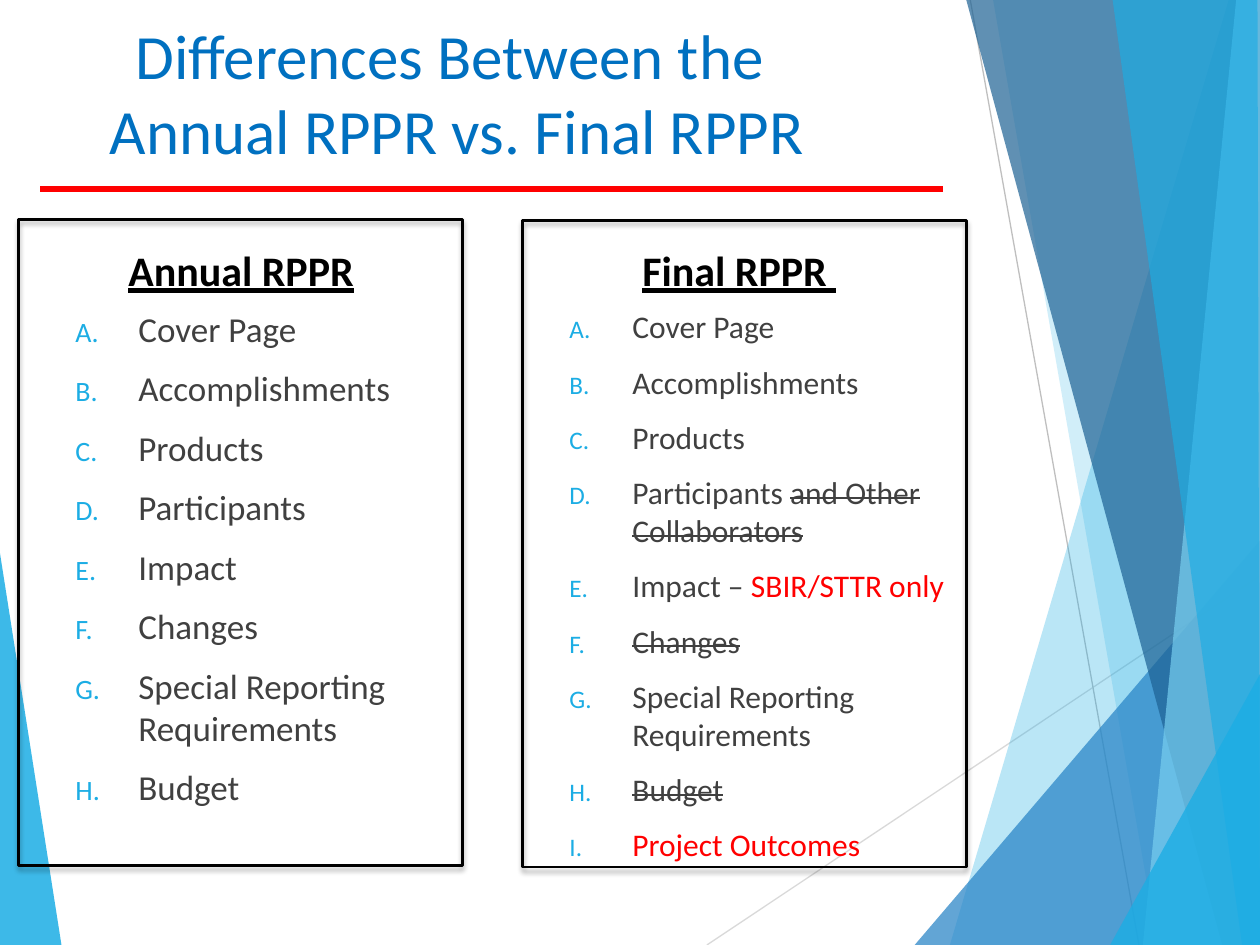
import pptx
import pptx.dml.color
import pptx.enum.shapes
import pptx.enum.text
import pptx.oxml
import pptx.oxml.ns
import pptx.util
from lxml import etree

Cm, Pt = pptx.util.Cm, pptx.util.Pt
W, H = 25.4, 19.05
FONT = "Calibri"
BLUE, GREY, RED = "1CADE4", "404040", "FF0000"

# Content: list items are sequences of (text, style) runs
TITLE = ["Differences Between the ", "Annual RPPR vs. Final RPPR"]
ANNUAL = [[(item, "plain")] for item in (
    "Cover Page", "Accomplishments", "Products", "Participants", "Impact",
    "Changes", "Special Reporting Requirements", "Budget")]
FINAL = [
    [("Cover Page", "plain")],
    [("Accomplishments", "plain")],
    [("Products", "plain")],
    [("Participants ", "plain"), ("and Other Collaborators", "struck")],
    [("Impact – ", "plain"), ("SBIR/STTR only", "new")],
    [("Changes", "struck")],
    [("Special Reporting Requirements", "plain")],
    [("Budget", "struck")],
    [("Project Outcomes", "new")],
]
# heading, heading place, items, item size, list place, frame place (cm)
COLUMNS = [
    ("Final RPPR ", (12.7, 4.8, 4.88, 1.78), FINAL, 18,
     (11.23, 6.07, 9.14, 10.67), (10.54, 4.45, 8.94, 13.03)),
    ("Annual RPPR", (2.34, 4.8, 5.08, 1.78), ANNUAL, 20,
     (1.27, 6.07, 6.99, 10.67), (0.38, 4.42, 8.94, 13.03)),
]

# Background facets: colour, opacity in percent, corners (cm)
LEFT_FACET = (BLUE, 85, [(0, 11.15), (1.24, H), (0, H)])
RIGHT_FACETS = [
    (BLUE, 30, [(24.77, 0), (19.15, H), (W, H), (W, 0)]),
    (BLUE, 20, [(20.02, 0), (23.34, H), (W, H), (W, 0)]),
    ("2683C6", 72, [(18.44, H), (W, 10.9), (W, H)]),
    ("1D6294", 70, [(19.48, 0), (24.64, H), (W, H), (W, 0)]),
    ("77CEEF", 70, [(24.92, 0), (23.04, H), (W, H), (W, 0)]),
    (BLUE, 65, [(22.43, 0), (25.04, H), (W, H), (25.35, 0)]),
    (BLUE, 80, [(22.38, H), (W, 13.59), (W, H)]),
]
HAIRLINES = [("D9D9D9", (14.25, H, W, 11.61)), ("BFBFBF", (19.56, 0, 22.96, H))]

prs = pptx.Presentation()
prs.slide_width, prs.slide_height = Cm(W), Cm(H)
slide = prs.slides.add_slide(prs.slide_layouts[6])


def rgb(value):
    return pptx.dml.color.RGBColor.from_string(value)


def sub(parent, tag, **attributes):
    return etree.SubElement(parent, pptx.oxml.ns.qn(tag), attributes)


def add_facet(color, opacity, corners):
    builder = slide.shapes.build_freeform(
        Cm(corners[0][0]), Cm(corners[0][1]), scale=1.0)
    builder.add_line_segments([(Cm(x), Cm(y)) for x, y in corners[1:]], close=True)
    facet = builder.convert_to_shape()
    facet.shadow.inherit = False
    facet.fill.solid()
    facet.fill.fore_color.rgb = rgb(color)
    facet.line.fill.background()
    tint = facet.fill._xPr.find(".//" + pptx.oxml.ns.qn("a:srgbClr"))
    sub(tint, "a:alpha", val=str(opacity * 1000))


def add_line(color, ends, width):
    line = slide.shapes.add_connector(
        pptx.enum.shapes.MSO_CONNECTOR.STRAIGHT, *map(Cm, ends))
    line.line.color.rgb = rgb(color)
    line.line.width = Pt(width)
    sub(line._element.spPr, "a:effectLst")


def add_text(place):
    frame = slide.shapes.add_textbox(*map(Cm, place)).text_frame
    frame.word_wrap = True
    frame.vertical_anchor = pptx.enum.text.MSO_ANCHOR.TOP
    return frame


def add_run(paragraph, text, size, color):
    run = paragraph.add_run()
    run.text = text
    run.font.name, run.font.size = FONT, Pt(size)
    run.font.color.rgb = rgb(color)
    return run


def add_list(items, size, place):
    frame = add_text(place)
    for i, item in enumerate(items):
        paragraph = frame.add_paragraph() if i else frame.paragraphs[0]
        props = paragraph._p.get_or_add_pPr()
        props.set("marL", str(Cm(1.27)))
        props.set("indent", str(-Cm(1.27)))
        sub(sub(props, "a:buClr"), "a:srgbClr", val=BLUE)
        sub(props, "a:buSzPct", val="80000")
        sub(props, "a:buFont", typeface=FONT)
        sub(props, "a:buAutoNum", type="alphaUcPeriod")
        if i:
            paragraph.space_before = Pt(10)
        for text, style in item:
            run = add_run(paragraph, text, size, RED if style == "new" else GREY)
            if style == "struck":
                run._r.get_or_add_rPr().set("strike", "sngStrike")


def add_frame(place):
    box = slide.shapes.add_shape(
        pptx.enum.shapes.MSO_SHAPE.RECTANGLE, *map(Cm, place))
    box.fill.background()
    box.line.color.rgb = rgb("000000")
    box.line.width = Pt(1.5)
    box.shadow.inherit = False
    effects = box._element.spPr.find(pptx.oxml.ns.qn("a:effectLst"))
    shadow = sub(effects, "a:outerShdw", blurRad=str(Pt(3)), dist=str(Pt(2)),
                 dir="5400000", rotWithShape="0")
    sub(sub(shadow, "a:srgbClr", val="000000"), "a:alpha", val="35000")


# Background
add_facet(*LEFT_FACET)
for color, ends in HAIRLINES:
    add_line(color, ends, 0.75)
for facet in RIGHT_FACETS:
    add_facet(*facet)

# Title and rule
title = add_text((1.27, 0.2, 15.88, 3.18)).paragraphs[0]
title.alignment = pptx.enum.text.PP_ALIGN.CENTER
for i, text in enumerate(TITLE):
    if i:
        title.add_line_break()
    add_run(title, text, 36, "0070C0")
add_line(RED, (0.81, 3.81, 19, 3.81), 3)

# Columns
for heading, heading_place, items, size, list_place, frame_place in COLUMNS:
    add_list(items, size, list_place)
    run = add_run(add_text(heading_place).paragraphs[0], heading, 24, "000000")
    run.font.bold = run.font.underline = True
    add_frame(frame_place)

prs.save("out.pptx")
